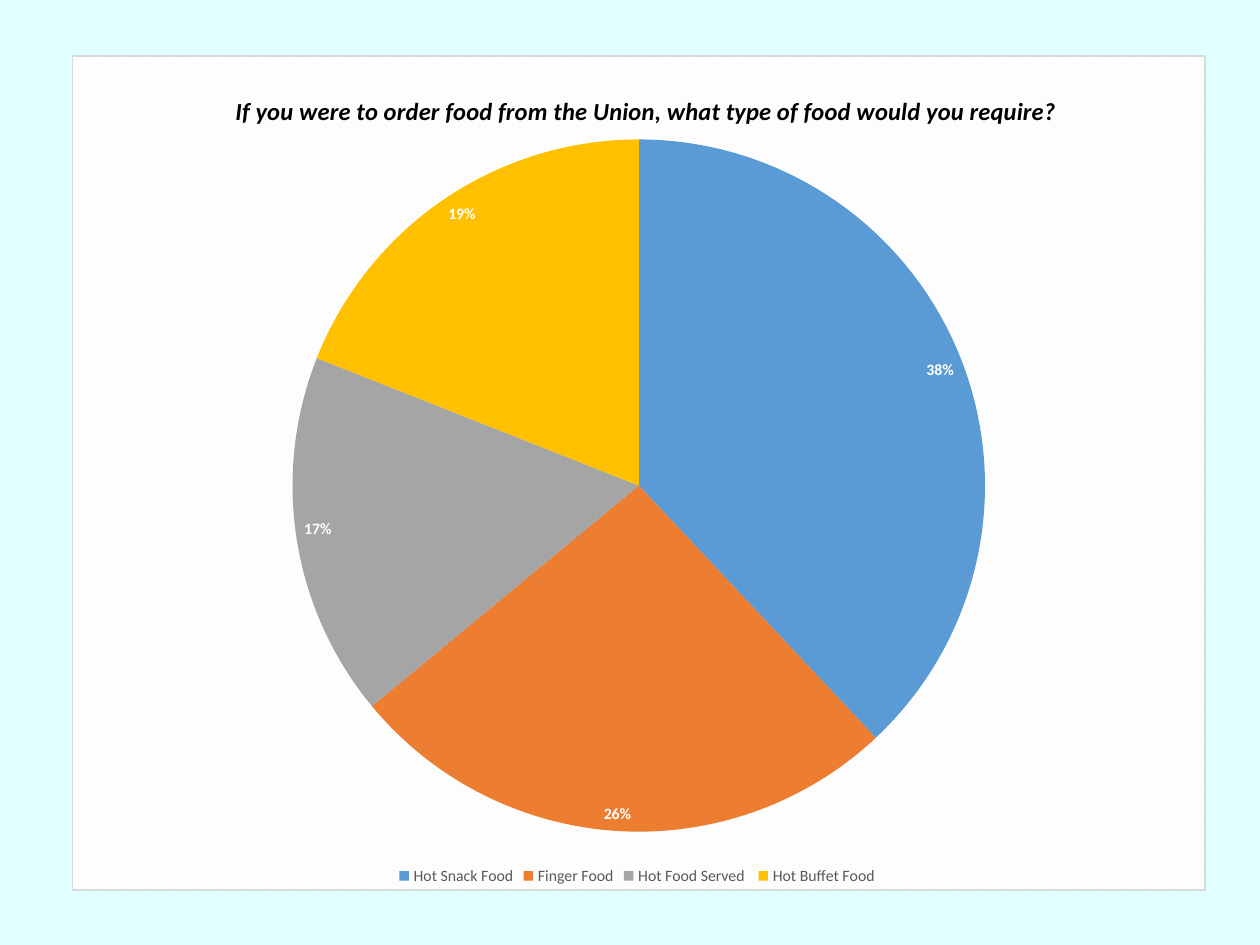
from lxml import etree
from pptx import Presentation
from pptx.chart.data import CategoryChartData
from pptx.dml.color import RGBColor
from pptx.enum.chart import XL_CHART_TYPE, XL_LABEL_POSITION as LabelPosition
from pptx.enum.chart import XL_LEGEND_POSITION as LegendPosition
from pptx.oxml import parse_xml
from pptx.oxml.ns import nsdecls, qn
from pptx.util import Inches, Pt


def color(value):
    return RGBColor.from_string(value)


def place(element, **fractions):
    """Set a manual layout, in fractions of the chart area."""
    layout = element.find(qn("c:layout"))
    if layout is None:
        layout = etree.Element(qn("c:layout"))
        element.insert(0, layout)
    manual = etree.SubElement(layout, qn("c:manualLayout"))
    if "w" in fractions:
        etree.SubElement(manual, qn("c:layoutTarget"), val="inner")
    for axis in ("x", "y"):
        etree.SubElement(manual, qn(f"c:{axis}Mode"), val="edge")
    for key, fraction in fractions.items():
        etree.SubElement(manual, qn(f"c:{key}"), val=str(fraction))


presentation = Presentation()
presentation.slide_width = Inches(10)
presentation.slide_height = Inches(7.5)
slide = presentation.slides.add_slide(presentation.slide_layouts[6])
slide.background.fill.solid()
slide.background.fill.fore_color.rgb = color("E1FFFF")

answers = [
    ("Hot Snack Food", 38, "5B9BD5"),
    ("Finger Food", 26, "ED7D31"),
    ("Hot Food Served ", 17, "A5A5A5"),
    ("Hot Buffet Food ", 19, "FFC000"),
]
chart_data = CategoryChartData()
chart_data.categories = [name for name, _, _ in answers]
chart_data.add_series("Series 1", [share for _, share, _ in answers])
chart = slide.shapes.add_chart(
    XL_CHART_TYPE.PIE, Inches(0.57), Inches(0.44), Inches(9), Inches(6.63), chart_data
).chart

# Title, legend and percentage labels
chart.has_title = True
title_frame = chart.chart_title.text_frame
title_frame.text = (
    "If you were to order food from the Union, what type of food would you require?"
)
chart.chart_title.include_in_layout = False
chart.has_legend = True
chart.legend.position = LegendPosition.BOTTOM
chart.legend.include_in_layout = False

plot = chart.plots[0]
plot.vary_by_categories = True
plot.has_data_labels = True
labels = plot.data_labels
labels.show_percentage = True
labels.show_value = False
labels.number_format = "0%"
labels.number_format_is_linked = False
labels.position = LabelPosition.INSIDE_END

font_formats = [
    (chart.font, "000000", {"size": Pt(10)}),
    (title_frame.paragraphs[0].runs[0].font, "000000",
     {"size": Pt(14), "bold": True, "italic": True}),
    (chart.legend.font, "595959", {"size": Pt(9), "bold": False}),
    (labels.font, "FFFFFF", {"size": Pt(9), "bold": True}),
]
for font, font_color, values in font_formats:
    font.name = "Calibri"
    font.color.rgb = color(font_color)
    for key, value in values.items():
        setattr(font, key, value)

for index, (_, _, slice_color) in enumerate(answers):
    slice_format = plot.series[0].points[index].format
    slice_format.fill.solid()
    slice_format.fill.fore_color.rgb = color(slice_color)
    slice_format.line.fill.background()

# Chart area: hatched fill, thin border, square corners
chart_element = chart.element.find(qn("c:chart"))
chart_element.addprevious(parse_xml(f'<c:roundedCorners {nsdecls("c")} val="0"/>'))
chart_element.addnext(parse_xml(
    f'<c:spPr {nsdecls("c", "a")}>'
    '<a:pattFill prst="dkDnDiag"><a:fgClr><a:srgbClr val="F2F2F2"/></a:fgClr>'
    '<a:bgClr><a:srgbClr val="FFFFFF"/></a:bgClr></a:pattFill>'
    f'<a:ln w="{Pt(0.75)}"><a:solidFill><a:srgbClr val="D9D9D9"/></a:solidFill></a:ln>'
    "</c:spPr>"
))
place(chart_element.find(qn("c:title")), x=0.14, y=0.04)
place(chart_element.find(qn("c:plotArea")), x=0.19, y=0.1, w=0.62, h=0.83)

presentation.save("out.pptx")
